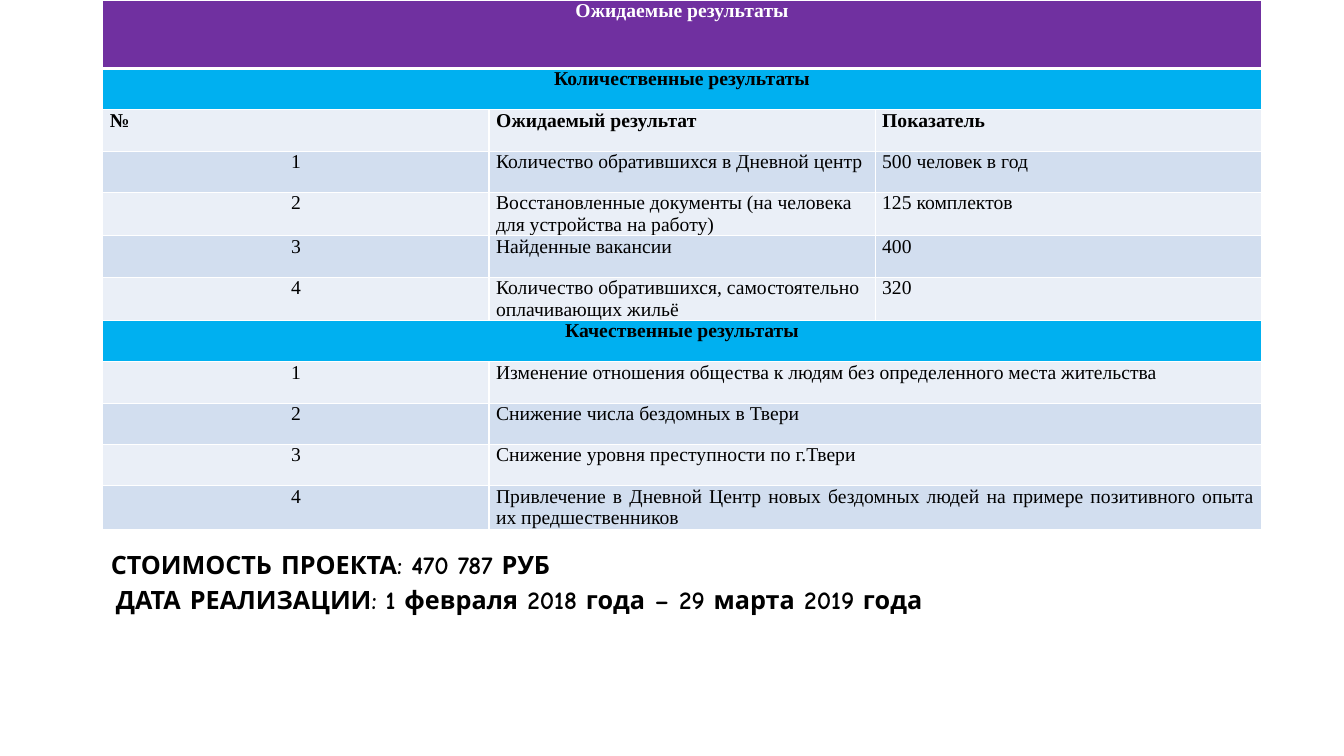
from lxml import etree
from pptx import Presentation
from pptx.dml.color import RGBColor
from pptx.enum.text import MSO_AUTO_SIZE, PP_ALIGN
from pptx.oxml.ns import qn
from pptx.util import Inches, Pt

LEFT, CENTER, JUSTIFY = PP_ALIGN.LEFT, PP_ALIGN.CENTER, PP_ALIGN.JUSTIFY
FIT_SHAPE = MSO_AUTO_SIZE.SHAPE_TO_FIT_TEXT

COLORS = {
    "title": "7030A0",
    "section": "00B0F0",
    "light": "EAEFF7",
    "dark": "D2DEEF",
    "white": "FFFFFF",
    "black": "000000",
}
TABLE_FONT = "Times New Roman"
NOTE_FONT = "Comic Neue"

ROWS = [
    ("Ожидаемые результаты",),
    ("Количественные результаты",),
    ("№", "Ожидаемый результат", "Показатель"),
    ("1", "Количество обратившихся в Дневной центр", "500 человек в год"),
    ("2", "Восстановленные документы (на человека для устройства на работу)", "125 комплектов"),
    ("3", "Найденные вакансии", "400"),
    ("4", "Количество обратившихся, самостоятельно оплачивающих жильё", "320"),
    ("Качественные результаты",),
    ("1", "Изменение отношения общества к людям без определенного места жительства"),
    ("2", "Снижение числа бездомных в Твери"),
    ("3", "Снижение уровня преступности по г.Твери"),
    ("4", "Привлечение в Дневной Центр новых бездомных людей на примере позитивного опыта их предшественников"),
]
HEADER_ROW = 2
COLUMN_COUNT = 3
COLUMN_WIDTH = 3.83
TITLE_HEIGHT, ROW_HEIGHT = 0.68, 0.41

NOTES = [
    ("СТОИМОСТЬ ПРОЕКТА: 470 787 РУБ", 1, 5.4, 5.79),
    ("ДАТА РЕАЛИЗАЦИИ: 1 февраля 2018 года – 29 марта 2019 года", 1.05, 5.75, 9.76),
]


def add_text(paragraph, text, font, size, color, bold):
    run = paragraph.add_run()
    run.text = text
    run.font.name = font
    run.font.size = Pt(size)
    run.font.bold = bold
    run.font.color.rgb = RGBColor.from_string(COLORS[color])


def set_borders(cell, bottom_width):
    properties = cell._tc.get_or_add_tcPr()
    widths = {"a:lnL": 1, "a:lnR": 1, "a:lnT": 1, "a:lnB": bottom_width}
    for position, (tag, width) in enumerate(widths.items()):
        line = etree.Element(qn(tag), w=str(Pt(width)))
        fill = etree.SubElement(line, qn("a:solidFill"))
        etree.SubElement(fill, qn("a:srgbClr"), val=COLORS["white"])
        properties.insert(position, line)


def row_fill(row_index):
    if row_index == 0:
        return "title"
    if len(ROWS[row_index]) == 1:
        return "section"
    return "dark" if row_index % 2 else "light"


def text_alignment(row_index, column_index):
    if row_index == HEADER_ROW:
        return LEFT
    if column_index == 0:
        return CENTER
    return JUSTIFY if len(ROWS[row_index]) == 2 else LEFT


def add_results_table(slide):
    height = TITLE_HEIGHT + ROW_HEIGHT * (len(ROWS) - 1)
    frame = slide.shapes.add_table(
        len(ROWS), COLUMN_COUNT, Inches(1.02), Inches(0),
        Inches(COLUMN_WIDTH * COLUMN_COUNT), Inches(height),
    )
    table = frame.table
    for column in table.columns:
        column.width = Inches(COLUMN_WIDTH)
    for row_index, texts in enumerate(ROWS):
        row = table.rows[row_index]
        row.height = Inches(ROW_HEIGHT if row_index else TITLE_HEIGHT)
        for cell in row.cells:
            cell.margin_left = cell.margin_right = Inches(0.07)
            cell.margin_top = cell.margin_bottom = 0
            cell.fill.solid()
            cell.fill.fore_color.rgb = RGBColor.from_string(COLORS[row_fill(row_index)])
            set_borders(cell, 1 if row_index else 3)
        if len(texts) < COLUMN_COUNT:
            first_merged = table.cell(row_index, len(texts) - 1)
            first_merged.merge(table.cell(row_index, COLUMN_COUNT - 1))
        bold = len(texts) == 1 or row_index == HEADER_ROW
        color = "black" if row_index else "white"
        for column_index, text in enumerate(texts):
            paragraph = table.cell(row_index, column_index).text_frame.paragraphs[0]
            paragraph.alignment = text_alignment(row_index, column_index)
            add_text(paragraph, text, TABLE_FONT, 14, color, bold)


def add_note(slide, text, left, top, width):
    box = slide.shapes.add_textbox(Inches(left), Inches(top), Inches(width), Inches(0.4))
    box.text_frame.word_wrap = True
    box.text_frame.auto_size = FIT_SHAPE
    add_text(box.text_frame.paragraphs[0], text, NOTE_FONT, 18, "black", True)


def main():
    presentation = Presentation()
    presentation.slide_width = Inches(13.33)
    presentation.slide_height = Inches(7.5)
    slide = presentation.slides.add_slide(presentation.slide_layouts[6])
    add_results_table(slide)
    for note in NOTES:
        add_note(slide, *note)
    presentation.save("out.pptx")


if __name__ == "__main__":
    main()
